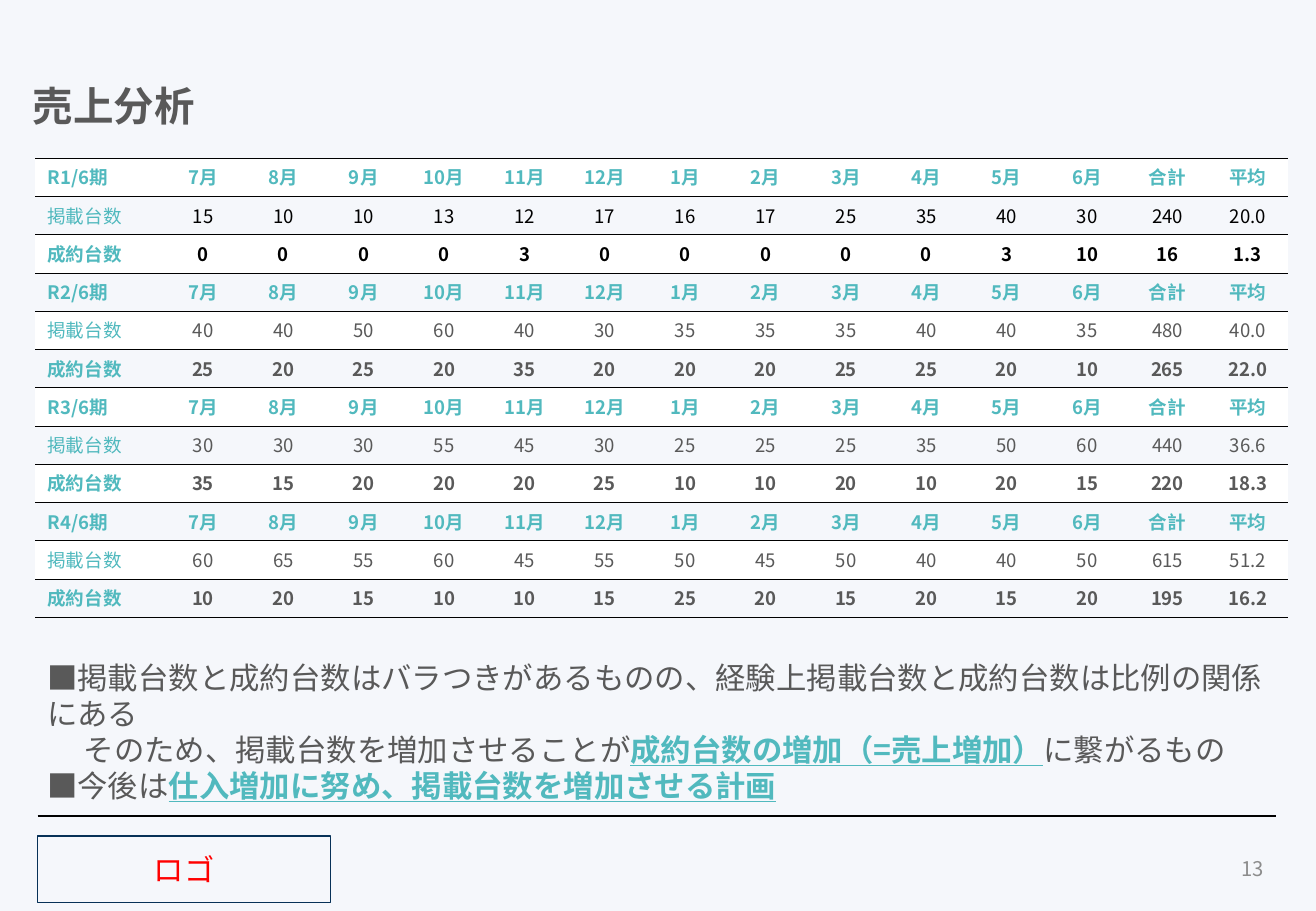
from lxml.etree import SubElement
from pptx import Presentation
from pptx.dml.color import RGBColor
from pptx.enum.shapes import MSO_CONNECTOR, MSO_SHAPE
from pptx.enum.text import MSO_ANCHOR, MSO_AUTO_SIZE, PP_ALIGN
from pptx.oxml import parse_xml
from pptx.oxml.ns import nsdecls, qn
from pptx.util import Inches, Pt

FONT = "Noto Sans CJK JP"
TEAL, GRAY, BLACK, WHITE = "51B9BE", "595959", "000000", "FFFFFF"
NO_STYLE = "{2D5ABB26-0587-4C30-8999-92F81FD0307C}"

TITLE = "売上分析"
MONTHS = [f"{month}月" for month in (7, 8, 9, 10, 11, 12, 1, 2, 3, 4, 5, 6)]
HEADINGS = MONTHS + ["合計", "平均"]
PERIODS = [
    ("R1/6期", BLACK,
     "15 10 10 13 12 17 16 17 25 35 40 30 240 20.0",
     "0 0 0 0 3 0 0 0 0 0 3 10 16 1.3"),
    ("R2/6期", GRAY,
     "40 40 50 60 40 30 35 35 35 40 40 35 480 40.0",
     "25 20 25 20 35 20 20 20 25 25 20 10 265 22.0"),
    ("R3/6期", GRAY,
     "30 30 30 55 45 30 25 25 25 35 50 60 440 36.6",
     "35 15 20 20 20 25 10 10 20 10 20 15 220 18.3"),
    ("R4/6期", GRAY,
     "60 65 55 60 45 55 50 45 50 40 40 50 615 51.2",
     "10 20 15 10 10 15 25 20 15 20 15 20 195 16.2"),
]
FINDINGS = [
    (0, [("■掲載台数と成約台数はバラつきがあるものの、経験上掲載台数と成約台数は比例の関係にある", False)]),
    (0.3, [("そのため、掲載台数を増加させることが", False),
           ("成約台数の増加（=売上増加）", True),
           ("に繋がるもの", False)]),
    (0, [("■今後は", False),
         ("仕入増加に努め、掲載台数を増加させる計画", True)]),
]


def color(value):
    return RGBColor.from_string(value)


def add_span(para, text, size, value, bold=False, underline=False):
    span = para.add_run()
    span.text = text
    font = span.font
    font.name, font.size, font.bold = FONT, Pt(size), bold
    font.underline = underline
    font.color.rgb = color(value)
    SubElement(font._element, qn("a:ea"), typeface=FONT)


def add_box(page, left, top, width, height, anchor):
    box = page.shapes.add_textbox(Inches(left), Inches(top), Inches(width), Inches(height))
    frame = box.text_frame
    frame.word_wrap = True
    frame.vertical_anchor = anchor
    return frame


def set_borders(cell, top, bottom):
    properties = cell._tc.get_or_add_tcPr()
    for position, (side, points) in enumerate((("lnT", top), ("lnB", bottom))):
        properties.insert(position, parse_xml(
            f'<a:{side} {nsdecls("a")} w="{Pt(points)}"><a:solidFill>'
            f'<a:srgbClr val="{BLACK}"/></a:solidFill></a:{side}>'))


def add_sales_table(page):
    rows = []
    for period, value_color, listed, sold in PERIODS:
        rows.append((period, HEADINGS, TEAL, True))
        rows.append(("掲載台数", listed.split(), value_color, False))
        rows.append(("成約台数", sold.split(), value_color, True))
    width, height, label_width = 10.31, 3.78, 1.05
    table = page.shapes.add_table(len(rows), len(HEADINGS) + 1, Inches(0.29), Inches(1.3),
                                  Inches(width), Inches(height)).table
    table.first_row = table.horz_banding = False
    table._tbl.tblPr[0].text = NO_STYLE
    for index, column in enumerate(table.columns):
        column.width = Inches((width - label_width) / len(HEADINGS) if index else label_width)
    last = len(rows) - 1
    for row_index, (label, values, value_color, bold) in enumerate(rows):
        table.rows[row_index].height = Inches(height / len(rows))
        for column_index, text in enumerate([label] + values):
            cell = table.cell(row_index, column_index)
            cell.vertical_anchor = MSO_ANCHOR.BOTTOM
            cell.margin_top = 0
            if column_index:
                cell.margin_left = cell.margin_right = Inches(0.02)
            if row_index % 2 == 0:
                cell.fill.solid()
                cell.fill.fore_color.rgb = color(WHITE)
            else:
                cell.fill.background()
            set_borders(cell, 0.25 if row_index else 0.5, 0.5 if row_index == last else 0.25)
            para = cell.text_frame.paragraphs[0]
            para.alignment = PP_ALIGN.CENTER if column_index else PP_ALIGN.LEFT
            add_span(para, text, 11, value_color if column_index else TEAL, bold)


def add_title(page):
    title = page.shapes.title
    title.left, title.top = Inches(0.17), Inches(0.59)
    title.width, title.height = Inches(6.12), Inches(0.5)
    frame = title.text_frame
    frame.auto_size = MSO_AUTO_SIZE.NONE
    frame.vertical_anchor = MSO_ANCHOR.TOP
    para = frame.paragraphs[0]
    para.alignment = PP_ALIGN.LEFT
    para.line_spacing = Pt(31)
    add_span(para, TITLE, 24, GRAY, True)


def add_findings(page):
    frame = add_box(page, 0.29, 5.38, 10.31, 1.01, MSO_ANCHOR.TOP)
    for index, (indent, spans) in enumerate(FINDINGS):
        para = frame.add_paragraph() if index else frame.paragraphs[0]
        para.line_spacing = Pt(21.3)
        para._p.get_or_add_pPr().set("marL", str(Inches(indent)))
        for text, strong in spans:
            add_span(para, text, 18, TEAL if strong else GRAY, strong, strong)


def add_footer(page):
    rule = page.shapes.add_connector(MSO_CONNECTOR.STRAIGHT, Inches(0.31), Inches(6.72),
                                     Inches(10.5), Inches(6.72))
    rule.line.color.rgb = color(BLACK)
    rule.line.width = Pt(1)
    SubElement(rule._element.spPr, qn("a:effectLst"))

    logo = page.shapes.add_shape(MSO_SHAPE.RECTANGLE, Inches(0.31), Inches(6.88),
                                 Inches(2.41), Inches(0.55))
    logo.shadow.inherit = False
    logo.fill.background()
    logo.line.color.rgb = color("073157")
    logo.line.width = Pt(1)
    logo.text_frame.vertical_anchor = MSO_ANCHOR.MIDDLE
    para = logo.text_frame.paragraphs[0]
    para.alignment = PP_ALIGN.CENTER
    add_span(para, "ロゴ", 18, "FF0000")

    number = add_box(page, 9.72, 6.95, 0.78, 0.4, MSO_ANCHOR.MIDDLE).paragraphs[0]
    number.alignment = PP_ALIGN.RIGHT
    add_span(number, "13", 12, "8C8C8C")


def main():
    deck = Presentation()
    deck.slide_width, deck.slide_height = Inches(10.83), Inches(7.5)
    page = deck.slides.add_slide(deck.slide_layouts[5])
    page.background.fill.solid()
    page.background.fill.fore_color.rgb = color("F5F7FB")
    add_footer(page)
    add_title(page)
    add_sales_table(page)
    add_findings(page)
    deck.save("out.pptx")


if __name__ == "__main__":
    main()
